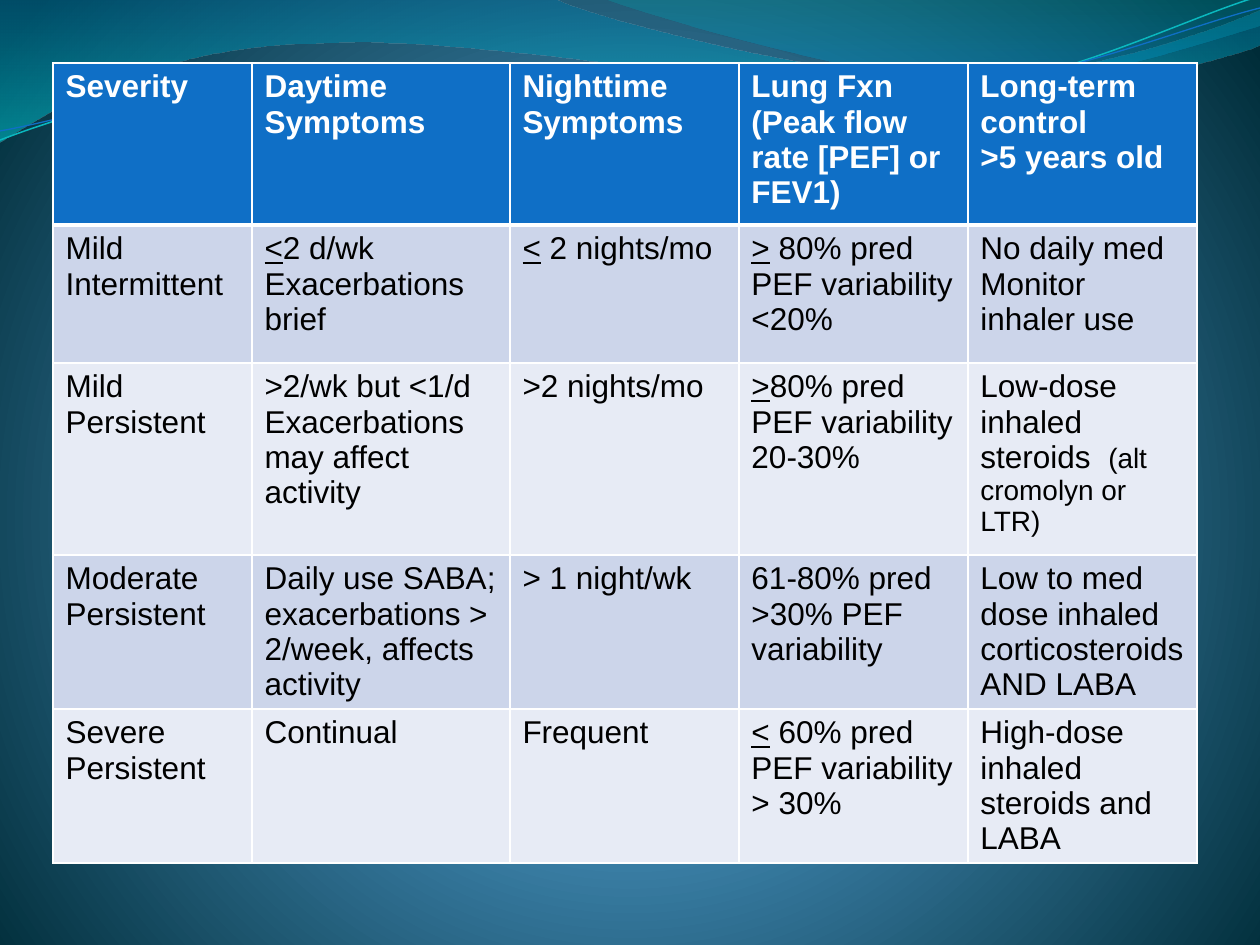
from collections import namedtuple

from lxml.etree import SubElement
from pptx import Presentation
from pptx.dml.color import RGBColor
from pptx.oxml import parse_xml
from pptx.oxml.ns import nsdecls, qn
from pptx.util import Pt

PX = 914400 // 126

WHITE = RGBColor(0xFF, 0xFF, 0xFF)
BLACK = RGBColor(0x00, 0x00, 0x00)
BLUE = RGBColor(0x0F, 0x6F, 0xC6)
TEAL = RGBColor(0x0A, 0xB8, 0xBF)
BAND_DARK = RGBColor(0xCC, 0xD5, 0xEA)
BAND_LIGHT = RGBColor(0xE7, 0xEB, 0xF5)

# Gradient stops: position in percent, colour, opacity in percent
BACKDROP = [(0, RGBColor(0x4A, 0xA0, 0xD6), 100),
            (25, RGBColor(0x4C, 0x98, 0xC7), 100),
            (100, RGBColor(0x00, 0x2C, 0x38), 100)]
WIDE_WAVE_FILL = [(0, RGBColor(0x00, 0x74, 0xA1), 45),
                  (100, RGBColor(0x00, 0xC6, 0xCF), 55)]
RIGHT_WAVE_FILL = [(0, RGBColor(0x00, 0xA1, 0xA9), 30),
                   (80, RGBColor(0x00, 0x8B, 0xBF), 45)]

# Outlines in px: a start, then one point per line or three per Bezier curve
WIDE_WAVE = [
    [(0, -1)], [(554, -1)],
    [(600, 21), (837, 79), (955, 79)], [(1075, 79), (1207, 33), (1260, 11)],
    [(1261, 45)],
    [(1239, 55), (1096, 96), (940, 95)], [(784, 95), (481, 35), (324, 43)],
    [(163, 44), (58, 105), (-1, 142)], [(0, -1)],
]
RIGHT_WAVE = [
    [(604, -1)],
    [(641, 14), (859, 78), (969, 82)], [(1079, 87), (1211, 40), (1260, 26)],
    [(1260, 0)], [(604, -1)],
]
TEAL_STRAND = [
    [(0, 140)],
    [(60, 117), (199, 72), (349, 66)], [(498, 59), (747, 112), (898, 101)],
    [(1050, 89), (1182, 19), (1257, -3)],
]
BLUE_STRAND = [
    [(0, 131)],
    [(59, 121), (207, 77), (357, 71)], [(508, 64), (752, 105), (903, 95)],
    [(1053, 84), (1186, 26), (1260, 8)],
]

Run = namedtuple("Run", "text underline size", defaults=(False, 18))
AT_MOST = Run("<", underline=True)
AT_LEAST = Run(">", underline=True)

# Each cell is a list of paragraphs; a paragraph is a text or a tuple of runs
SEVERITY_ROWS = [
    [["Severity"], ["Daytime Symptoms"], ["Nighttime Symptoms"],
     ["Lung Fxn", "(Peak flow rate [PEF] or FEV1)"],
     ["Long-term control", ">5 years old"]],
    [["Mild", "Intermittent"],
     [(AT_MOST, Run("2 d/wk")), "Exacerbations brief"],
     [(AT_MOST, Run(" 2 nights/mo"))],
     [(AT_LEAST, Run(" 80% pred PEF variability <20%"))],
     ["No daily med", "Monitor inhaler use"]],
    [["Mild Persistent"],
     [">2/wk but <1/d Exacerbations may affect activity"],
     [">2 nights/mo"],
     [(AT_LEAST, Run("80% pred")), "PEF variability 20-30%"],
     [(Run("Low-dose inhaled steroids  "),
       Run("(alt cromolyn or LTR)", size=16))]],
    [["Moderate Persistent"],
     ["Daily use SABA; exacerbations > 2/week, affects activity"],
     ["> 1 night/wk"],
     ["61-80% pred", ">30% PEF variability"],
     ["Low to med dose inhaled corticosteroids AND LABA"]],
    [["Severe Persistent"], ["Continual"], ["Frequent"],
     [(AT_MOST, Run(" 60% pred")), "PEF variability > 30%"],
     ["High-dose inhaled steroids and LABA"]],
]
COLUMN_WIDTHS = [199, 258, 229, 229, 229]
ROW_HEIGHTS = [162, 138, 192, 154, 154]


def px(length):
    return length * PX


def set_gradient(fill, owner, stops, radial=False):
    """Give the fill its stops, running downwards or out from the bottom."""
    fill.gradient()
    gradient = owner.find(".//" + qn("a:gradFill"))
    for child in list(gradient):
        gradient.remove(child)
    stop_list = SubElement(gradient, qn("a:gsLst"))
    for position, color, opacity in stops:
        stop = SubElement(stop_list, qn("a:gs"), pos=str(position * 1000))
        shade = SubElement(stop, qn("a:srgbClr"), val=str(color))
        if opacity < 100:
            SubElement(shade, qn("a:alpha"), val=str(opacity * 1000))
    if radial:
        circle = SubElement(gradient, qn("a:path"), path="circle")
        SubElement(circle, qn("a:fillToRect"),
                   l="10000", t="110000", r="10000", b="100000")
    else:
        SubElement(gradient, qn("a:lin"), ang="5400000", scaled="1")


def bend_segments(shape, segments):
    """Merge the three lines of each curved segment into one Bezier curve."""
    lines = iter(list(shape.element.iter(qn("a:lnTo"))))
    for segment in segments:
        first, *others = [next(lines) for _ in segment]
        if others:
            first.tag = qn("a:cubicBezTo")
            for line in others:
                first.append(line[0])
                line.getparent().remove(line)


def add_outline(slide, outline, close):
    (start,), *segments = outline
    builder = slide.shapes.build_freeform(*start, scale=PX)
    points = [point for segment in segments for point in segment]
    builder.add_line_segments(points, close=close)
    shape = builder.convert_to_shape()
    bend_segments(shape, segments)
    shape.shadow.inherit = False
    return shape


def add_wave(slide, outline, stops):
    wave = add_outline(slide, outline, close=True)
    set_gradient(wave.fill, wave.element, stops)
    wave.line.fill.background()


def add_strand(slide, outline, color, width):
    strand = add_outline(slide, outline, close=False)
    strand.fill.background()
    strand.line.color.rgb = color
    strand.line.width = Pt(width)


def set_borders(cell, top, bottom):
    """Draw white borders; top and bottom are widths in points."""
    properties = cell._tc.get_or_add_tcPr()
    for index, (side, width) in enumerate(
            (("L", 1), ("R", 1), ("T", top), ("B", bottom))):
        properties.insert(index, parse_xml(
            f'<a:ln{side} {nsdecls("a")} w="{Pt(width)}"><a:solidFill>'
            f'<a:srgbClr val="{WHITE}"/></a:solidFill></a:ln{side}>'))


def write_cell(cell, paragraphs, color, bold):
    frame = cell.text_frame
    for index, content in enumerate(paragraphs):
        paragraph = frame.add_paragraph() if index else frame.paragraphs[0]
        runs = (Run(content),) if isinstance(content, str) else content
        for part in runs:
            run = paragraph.add_run()
            run.text = part.text
            font = run.font
            font.name, font.size = "Arial", Pt(part.size)
            font.bold, font.underline = bold, part.underline
            font.color.rgb = color


def add_severity_table(slide, left, top):
    table = slide.shapes.add_table(
        len(ROW_HEIGHTS), len(COLUMN_WIDTHS), px(left), px(top),
        px(sum(COLUMN_WIDTHS)), px(sum(ROW_HEIGHTS))).table
    for column, width in zip(table.columns, COLUMN_WIDTHS):
        column.width = px(width)
    for row_index, (row, height) in enumerate(zip(table.rows, ROW_HEIGHTS)):
        row.height = px(height)
        header = row_index == 0
        band = BLUE if header else (BAND_LIGHT, BAND_DARK)[row_index % 2]
        for cell, paragraphs in zip(row.cells, SEVERITY_ROWS[row_index]):
            cell.fill.solid()
            cell.fill.fore_color.rgb = band
            set_borders(cell, top=3 if row_index == 1 else 1,
                        bottom=3 if header else 1)
            write_cell(cell, paragraphs, WHITE if header else BLACK, header)


def main():
    deck = Presentation()
    deck.slide_width, deck.slide_height = px(1260), px(945)
    slide = deck.slides.add_slide(deck.slide_layouts[6])
    set_gradient(slide.background.fill, slide.element, BACKDROP, radial=True)
    add_wave(slide, WIDE_WAVE, WIDE_WAVE_FILL)
    add_wave(slide, RIGHT_WAVE, RIGHT_WAVE_FILL)
    add_strand(slide, TEAL_STRAND, TEAL, 0.85)
    add_strand(slide, BLUE_STRAND, BLUE, 0.75)
    add_severity_table(slide, 53, 63)
    deck.save("out.pptx")


if __name__ == "__main__":
    main()
